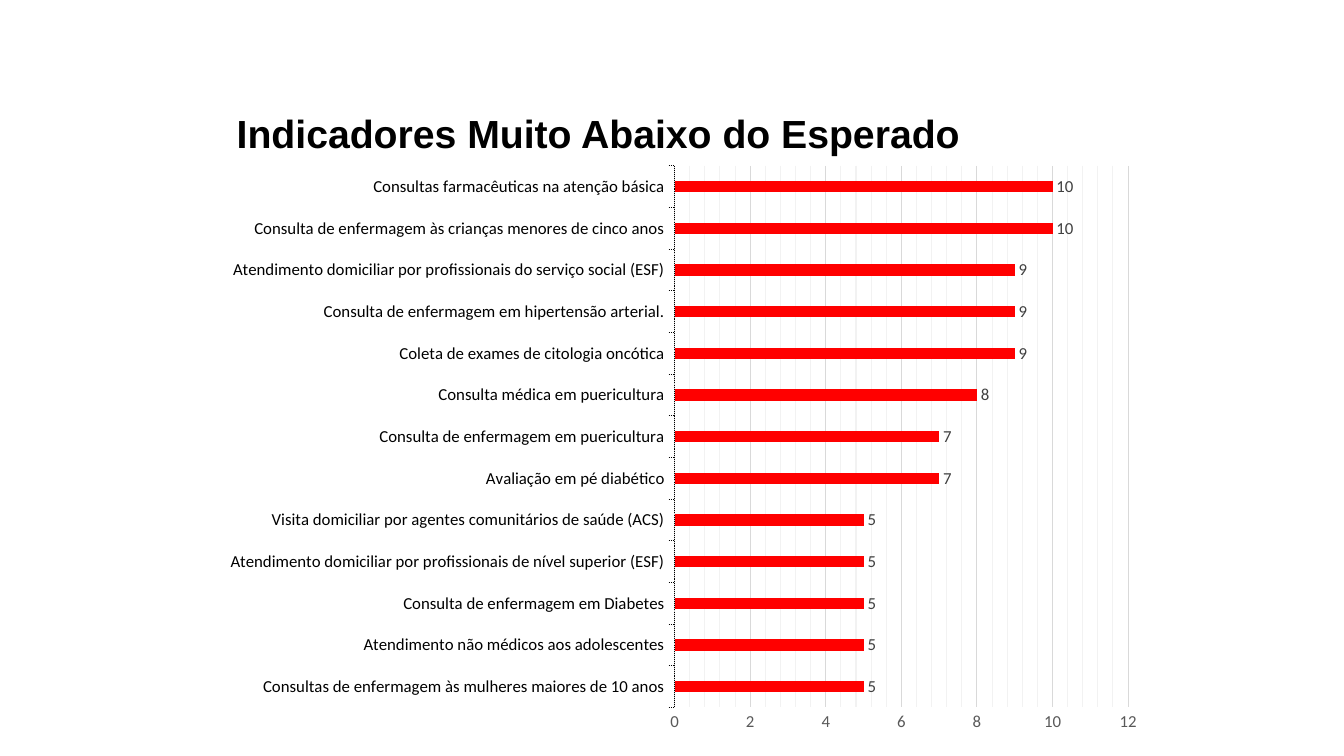
from copy import deepcopy
from dataclasses import dataclass
from typing import NamedTuple

from lxml import etree
from pptx import Presentation
from pptx.chart.axis import ValueAxis
from pptx.chart.chart import Chart
from pptx.chart.data import CategoryChartData
from pptx.dml.color import RGBColor
from pptx.dml.line import LineFormat
from pptx.enum.chart import XL_CHART_TYPE, XL_LABEL_POSITION, XL_TICK_MARK
from pptx.enum.dml import MSO_LINE
from pptx.enum.text import MSO_AUTO_SIZE
from pptx.oxml.ns import qn
from pptx.slide import Slide
from pptx.text.text import Font
from pptx.util import Inches, Pt


@dataclass(frozen=True)
class Theme:
    title_font: str = "Arial"
    chart_font: str = "Calibri"
    title_size: int = 28
    chart_size: int = 10
    label_size: int = 12
    line_width: float = 0.75
    black: str = "000000"
    bar: str = "FF0000"
    value_label: str = "404040"
    scale_label: str = "595959"
    major_grid: str = "D9D9D9"
    minor_grid: str = "F2F2F2"


class Indicator(NamedTuple):
    name: str
    value: int


THEME = Theme()

# Listed from the bottom bar to the top bar
INDICATORS = [
    Indicator("Consultas de enfermagem às mulheres maiores de 10 anos", 5),
    Indicator("Atendimento não médicos aos adolescentes", 5),
    Indicator("Consulta de enfermagem em Diabetes", 5),
    Indicator("Atendimento domiciliar por profissionais de nível superior (ESF)", 5),
    Indicator("Visita domiciliar por agentes comunitários de saúde (ACS)", 5),
    Indicator("Avaliação em pé diabético", 7),
    Indicator("Consulta de enfermagem em puericultura", 7),
    Indicator("Consulta médica em puericultura", 8),
    Indicator("Coleta de exames de citologia oncótica", 9),
    Indicator("Consulta de enfermagem em hipertensão arterial.", 9),
    Indicator("Atendimento domiciliar por profissionais do serviço social (ESF)", 9),
    Indicator("Consulta de enfermagem às crianças menores de cinco anos", 10),
    Indicator("Consultas farmacêuticas na atenção básica", 10),
]


def style_font(font: Font, name: str, size: int, color: str, bold: bool = False) -> None:
    font.name = name
    font.size = Pt(size)
    font.bold = bold
    font.color.rgb = RGBColor.from_string(color)


def style_line(line: LineFormat, color: str) -> None:
    line.width = Pt(THEME.line_width)
    line.color.rgb = RGBColor.from_string(color)


def add_title(page: Slide) -> None:
    box = page.shapes.add_textbox(Inches(2.25), Inches(1.04), Inches(7.46), Inches(0.57))
    frame = box.text_frame
    frame.word_wrap = False
    frame.auto_size = MSO_AUTO_SIZE.SHAPE_TO_FIT_TEXT
    frame.text = "Indicadores Muito Abaixo do Esperado"
    span = frame.paragraphs[0].runs[0]
    style_font(span.font, THEME.title_font, THEME.title_size, THEME.black, bold=True)


def place_plot(chart: Chart, left: float, top: float, width: float, height: float) -> None:
    """Fix the inner plot area, in fractions of the chart frame."""
    plot_area = chart.plots[0]._element.getparent()
    for layout in plot_area.findall(qn("c:layout")):
        plot_area.remove(layout)
    layout = etree.Element(qn("c:layout"))
    manual = etree.SubElement(layout, qn("c:manualLayout"))
    settings = {"layoutTarget": "inner", "xMode": "edge", "yMode": "edge",
                "x": left, "y": top, "w": width, "h": height}
    for tag, value in settings.items():
        etree.SubElement(manual, qn(f"c:{tag}")).set("val", str(value))
    plot_area.insert(0, layout)


def style_gridlines(scale: ValueAxis) -> None:
    """Style the major gridlines and give the minor ones the same line in a lighter colour."""
    scale.has_major_gridlines = scale.has_minor_gridlines = True
    style_line(scale.major_gridlines.format.line, THEME.major_grid)
    major = scale._element.find(qn("c:majorGridlines"))
    minor = scale._element.find(qn("c:minorGridlines"))
    properties = deepcopy(major.find(qn("c:spPr")))
    next(properties.iter(qn("a:srgbClr"))).set("val", THEME.minor_grid)
    minor.append(properties)


def style_axes(chart: Chart) -> None:
    names = chart.category_axis
    names.major_tick_mark = XL_TICK_MARK.OUTSIDE
    names.minor_tick_mark = XL_TICK_MARK.NONE
    names.has_major_gridlines = False
    style_font(names.tick_labels.font, THEME.chart_font, THEME.label_size, THEME.black)
    style_line(names.format.line, THEME.black)
    names.format.line.dash_style = MSO_LINE.ROUND_DOT

    scale = chart.value_axis
    scale.minimum_scale, scale.maximum_scale = 0, 12
    scale.major_unit, scale.minor_unit = 2, 0.4
    scale.major_tick_mark = scale.minor_tick_mark = XL_TICK_MARK.NONE
    style_gridlines(scale)
    style_font(scale.tick_labels.font, THEME.chart_font, THEME.label_size, THEME.scale_label)
    scale.format.line.fill.background()


def style_bars(chart: Chart) -> None:
    plot = chart.plots[0]
    plot.gap_width = 269
    plot.overlap = -48
    plot.vary_by_categories = False
    fill = plot.series[0].format.fill
    fill.solid()
    fill.fore_color.rgb = RGBColor.from_string(THEME.bar)
    labels = plot.series[0].data_labels
    labels.show_value = True
    labels.position = XL_LABEL_POSITION.OUTSIDE_END
    style_font(labels.font, THEME.chart_font, THEME.label_size, THEME.value_label)


def add_indicator_chart(page: Slide) -> None:
    data = CategoryChartData(number_format="General")
    data.categories = [indicator.name for indicator in INDICATORS]
    data.add_series("Series 1", [indicator.value for indicator in INDICATORS])
    chart = page.shapes.add_chart(
        XL_CHART_TYPE.BAR_CLUSTERED,
        Inches(2.1), Inches(1.53), Inches(9.37), Inches(5.84), data,
    ).chart
    chart.has_title = False
    chart.has_legend = False
    style_font(chart.font, THEME.chart_font, THEME.chart_size, THEME.black)
    place_plot(chart, 0.49, 0.02, 0.48, 0.92)
    style_axes(chart)
    style_bars(chart)


def main() -> None:
    deck = Presentation()
    deck.slide_width, deck.slide_height = Inches(13.33), Inches(7.5)
    page = deck.slides.add_slide(deck.slide_layouts[6])
    # Title above the bar chart
    add_title(page)
    add_indicator_chart(page)
    deck.save("out.pptx")


if __name__ == "__main__":
    main()
